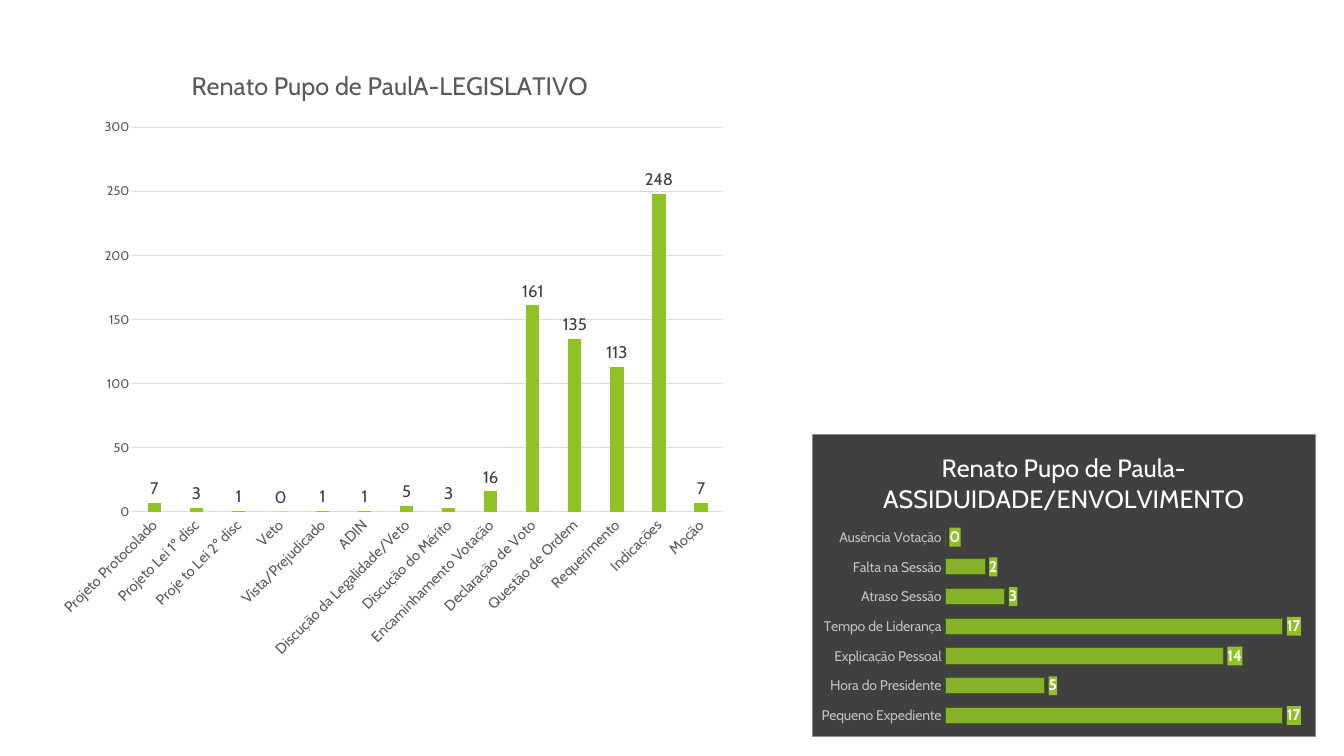
from pptx import Presentation
from pptx.chart.data import CategoryChartData
from pptx.dml.color import RGBColor
from pptx.enum.chart import XL_CHART_TYPE, XL_LABEL_POSITION, XL_TICK_MARK
from pptx.oxml import parse_xml
from pptx.oxml.ns import nsdecls, qn
from pptx.util import Inches, Pt

GREEN = RGBColor(0x90, 0xC2, 0x26)
DARK_GREEN = RGBColor(0x48, 0x61, 0x13)
BLACK = RGBColor(0, 0, 0)
WHITE = RGBColor(0xFF, 0xFF, 0xFF)
CHARCOAL = RGBColor(0x40, 0x40, 0x40)
GRAY = RGBColor(0x59, 0x59, 0x59)
MID_GRAY = RGBColor(0x8C, 0x8C, 0x8C)
SILVER = RGBColor(0xBF, 0xBF, 0xBF)
LIGHT_GRAY = RGBColor(0xD9, 0xD9, 0xD9)
FONT = "Cabin"

LEGISLATIVE = {
    "Projeto Protocolado": 7, "Projeto Lei 1º disc": 3, "Proje to Lei 2º disc": 1,
    "Veto": 0, "Vista/Prejudicado": 1, "ADIN": 1, "Discução da Legalidade/Veto": 5,
    "Discução do Mérito": 3, "Encaminhamento Votação": 16, "Declaração de Voto": 161,
    "Questão de Ordem": 135, "Requerimento": 113, "Indicações": 248, "Moção": 7,
}
ATTENDANCE = {
    "Pequeno Expediente": 17, "Hora do Presidente": 5, "Explicação Pessoal": 14,
    "Tempo de Liderança": 17, "Atraso Sessão": 3, "Falta na Sessão": 2,
    "Ausência Votação": 0,
}


def set_attrs(obj, **values):
    """Set each named attribute of an object."""
    for name, value in values.items():
        setattr(obj, name, value)


def set_font(font, size, color, bold=False):
    """Format a font in the slide's typeface."""
    set_attrs(font, name=FONT, size=Pt(size), bold=bold)
    font.color.rgb = color


def set_line(line, color, width=0.75):
    """Give a line a solid colour and a width."""
    line.color.rgb = color
    line.width = Pt(width)


def fill_xml(color, line=""):
    """Return chart shape properties with a solid fill."""
    return parse_xml(
        f'<c:spPr {nsdecls("c", "a")}><a:solidFill><a:srgbClr val="{color}"/>'
        f'</a:solidFill>{line}</c:spPr>')


def set_plot_area(chart, *shares):
    """Place the inner plot area by shares of the chart's box."""
    area = chart._chartSpace.chart.plotArea
    for old in area.findall(qn("c:layout")):
        area.remove(old)
    sizes = "".join(f'<c:{k} val="{v}"/>' for k, v in zip("xywh", shares))
    area.insert(0, parse_xml(
        f'<c:layout {nsdecls("c")}><c:manualLayout><c:layoutTarget val="inner"/>'
        f'<c:xMode val="edge"/><c:yMode val="edge"/>{sizes}'
        '</c:manualLayout></c:layout>'))


def add_bars(slide, box, kind, title, data, title_color, axis_font, label_font, plot, scale):
    """Add a titled bar chart with labelled bars in the given box."""
    cd = CategoryChartData(number_format="0")
    cd.categories = list(data)
    cd.add_series("Series 1", list(data.values()))
    chart = slide.shapes.add_chart(kind, *map(Inches, box), cd).chart
    set_font(chart.font, 10, BLACK)
    chart.has_legend = False
    tf = chart.chart_title.text_frame
    tf.text = title
    set_font(tf.paragraphs[0].runs[0].font, 18, title_color)
    for axis in (chart.category_axis, chart.value_axis):
        set_attrs(axis, major_tick_mark=XL_TICK_MARK.NONE,
                  minor_tick_mark=XL_TICK_MARK.NONE, has_major_gridlines=False)
        axis.format.line.fill.background()
    set_font(chart.category_axis.tick_labels.font, *axis_font)
    set_attrs(chart.value_axis, **scale)
    bars = chart.plots[0]
    set_attrs(bars, vary_by_categories=False, has_data_labels=True)
    set_attrs(bars.data_labels, show_value=True, number_format="0",
              number_format_is_linked=False, position=XL_LABEL_POSITION.OUTSIDE_END)
    set_font(bars.data_labels.font, *label_font)
    fill = bars.series[0].format.fill
    fill.solid()
    fill.fore_color.rgb = GREEN
    set_plot_area(chart, *plot)
    return chart


def add_legislative_chart(slide, box):
    """Add the column chart of legislative work."""
    chart = add_bars(
        slide, box, XL_CHART_TYPE.COLUMN_CLUSTERED, "Renato Pupo de PaulA-LEGISLATIVO",
        LEGISLATIVE, GRAY, (10.5, GRAY), (12, CHARCOAL), (0.13, 0.13, 0.85, 0.62),
        dict(minimum_scale=0, maximum_scale=300, major_unit=50, has_major_gridlines=True))
    set_attrs(chart.plots[0], gap_width=219, overlap=-27)
    labels = chart.value_axis.tick_labels
    set_attrs(labels, number_format="0", number_format_is_linked=False)
    set_font(labels.font, 9, GRAY)
    set_line(chart.value_axis.major_gridlines.format.line, LIGHT_GRAY)
    set_line(chart.category_axis.format.line, LIGHT_GRAY)
    body = chart.category_axis._element.find(qn("c:txPr")).find(qn("a:bodyPr"))
    body.set("rot", "-2700000")
    body.set("vert", "horz")


def add_attendance_chart(slide, box):
    """Add the dark bar chart of attendance and involvement."""
    chart = add_bars(
        slide, box, XL_CHART_TYPE.BAR_CLUSTERED,
        "Renato Pupo de Paula-ASSIDUIDADE/ENVOLVIMENTO",
        ATTENDANCE, WHITE, (10, SILVER), (11, WHITE, True), (0.265, 0.29, 0.71, 0.69),
        dict(minimum_scale=0, maximum_scale=18, visible=False))
    bars = chart.plots[0]
    bars.gap_width = 84
    series = bars.series[0]
    set_line(series.format.line, DARK_GREEN)
    color = next(series._element.iter(qn("a:srgbClr")))
    color.append(parse_xml(f'<a:alpha {nsdecls("a")} val="88000"/>'))
    bars.data_labels._element.find(qn("c:txPr")).addprevious(fill_xml(GREEN))
    border = (f'<a:ln w="{Pt(0.5)}"><a:solidFill><a:srgbClr val="{MID_GRAY}"/>'
              '</a:solidFill></a:ln>')
    chart._chartSpace.chart.addnext(fill_xml(CHARCOAL, border))


def main():
    """Build the slide and save it."""
    prs = Presentation()
    set_attrs(prs, slide_width=Inches(13.33), slide_height=Inches(7.5))
    slide = prs.slides.add_slide(prs.slide_layouts[6])
    add_legislative_chart(slide, (0.43, 0.46, 6.87, 6.16))
    add_attendance_chart(slide, (8.05, 4.31, 5, 3))
    prs.save("out.pptx")


if __name__ == "__main__":
    main()
